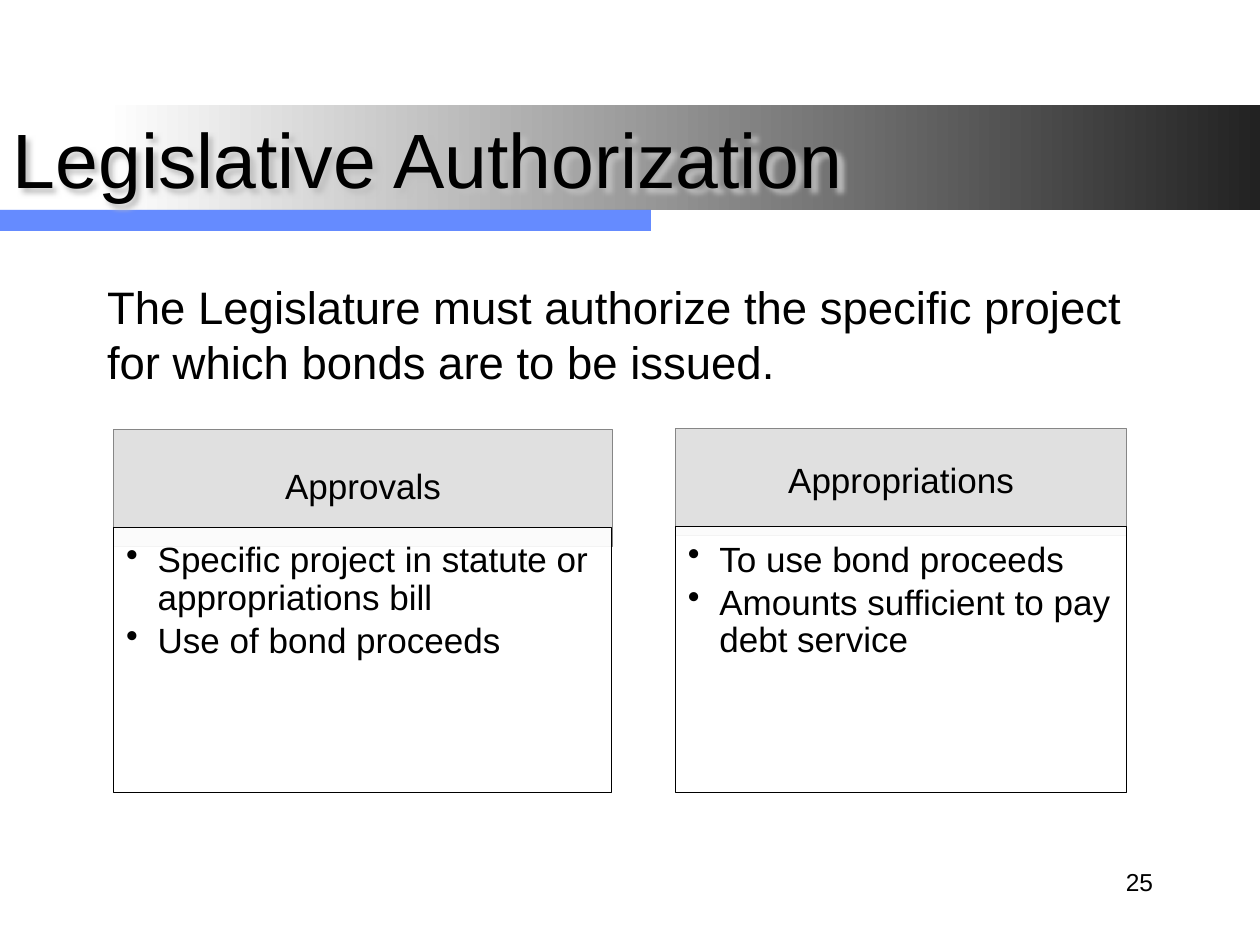
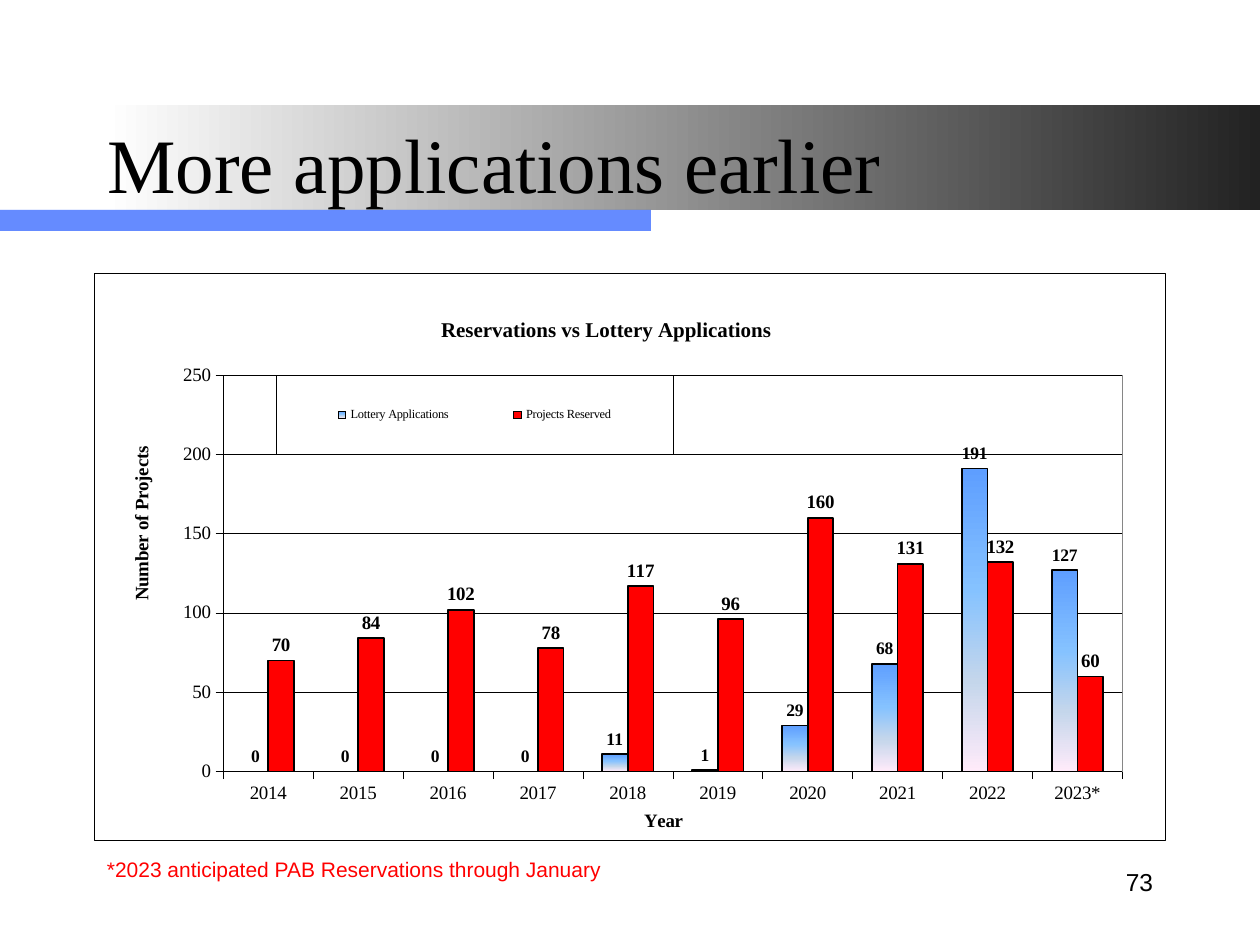
from lxml import etree
from pptx import Presentation
from pptx.chart.data import CategoryChartData
from pptx.dml.color import RGBColor
from pptx.enum.chart import XL_CHART_TYPE, XL_LABEL_POSITION, XL_LEGEND_POSITION, XL_TICK_MARK
from pptx.enum.shapes import MSO_SHAPE
from pptx.enum.text import MSO_ANCHOR, MSO_AUTO_SIZE, PP_ALIGN
from pptx.oxml import parse_xml
from pptx.oxml.ns import nsdecls, qn
from pptx.util import Pt

BLACK = RGBColor(0x00, 0x00, 0x00)
WHITE = RGBColor(0xFF, 0xFF, 0xFF)
RED = RGBColor(0xFF, 0x00, 0x00)
BLUE = RGBColor(0x33, 0x66, 0xFF)
GRAY = RGBColor(0x86, 0x86, 0x86)
CHARCOAL = RGBColor(0x22, 0x22, 0x22)
BAND_STOPS = [(0, WHITE), (100, CHARCOAL)]
LOTTERY_STOPS = [
    (0, RGBColor(0x5E, 0x9E, 0xFF)),
    (40, RGBColor(0x85, 0xC2, 0xFF)),
    (70, RGBColor(0xC4, 0xD6, 0xEB)),
    (100, RGBColor(0xFF, 0xEB, 0xFA)),
]

RECTANGLE = MSO_SHAPE.RECTANGLE
TOP, MIDDLE = MSO_ANCHOR.TOP, MSO_ANCHOR.MIDDLE
LEFT, CENTER, RIGHT = PP_ALIGN.LEFT, PP_ALIGN.CENTER, PP_ALIGN.RIGHT
NO_AUTOFIT = MSO_AUTO_SIZE.NONE
COLUMNS = XL_CHART_TYPE.COLUMN_CLUSTERED
OUTSIDE, NO_TICK = XL_TICK_MARK.OUTSIDE, XL_TICK_MARK.NONE
LABEL_ABOVE = XL_LABEL_POSITION.OUTSIDE_END
LEGEND_RIGHT = XL_LEGEND_POSITION.RIGHT

SANS, SERIF = "Arial", "Times New Roman"
CONTENT_BOX = (54, 156, 612, 324)

YEARS = ["2014", "2015", "2016", "2017", "2018", "2019", "2020", "2021", "2022", "2023*"]
LOTTERY_APPLICATIONS = [0, 0, 0, 0, 11, 1, 29, 68, 191, 127]
PROJECTS_RESERVED = [70, 84, 102, 78, 117, 96, 160, 131, 132, 60]


def apply_format(target, **values):
    for name, value in values.items():
        setattr(target, name, value)


def style_font(font, size, name=SANS, color=BLACK, bold=False):
    apply_format(font, size=Pt(size), name=name, bold=bold)
    font.color.rgb = color


def place(shape, box):
    left, top, width, height = map(Pt, box)
    apply_format(shape, left=left, top=top, width=width, height=height)


def set_gradient(fill, root, stops, angle):
    """Fill with any number of stops; root is the element that holds the fill."""
    fill.gradient()
    fill.gradient_angle = angle
    stop_list = next(root.iter(qn("a:gsLst")))
    for stop in list(stop_list):
        stop_list.remove(stop)
    for percent, color in stops:
        stop = etree.SubElement(stop_list, qn("a:gs"), pos=str(percent * 1000))
        etree.SubElement(stop, qn("a:srgbClr"), val=str(color))


def set_opacity(root, percent):
    for color in root.spPr.iter(qn("a:srgbClr")):
        etree.SubElement(color, qn("a:alpha"), val=str(percent * 1000))


def add_rectangle(shapes, box, fill, opacity=100, line=None):
    shape = shapes.add_shape(RECTANGLE, *map(Pt, box))
    shape.shadow.inherit = False
    shape.fill.solid()
    shape.fill.fore_color.rgb = fill
    set_opacity(shape.element, opacity)
    if line is None:
        shape.line.fill.background()
    else:
        shape.line.color.rgb = line
        shape.line.width = Pt(0.5)
    return shape


def add_master_bands(slide):
    """Draw the title bands and move them to the master, behind its placeholders."""
    gradient_band = add_rectangle(slide.shapes, (60, 60, 660, 60), WHITE)
    set_gradient(gradient_band.fill, gradient_band.element, BAND_STOPS, 0)
    bands = [gradient_band]
    for _ in range(2):
        bands.append(add_rectangle(slide.shapes, (0, 120, 372, 12), BLUE, 50))
    master_tree = slide.slide_layout.slide_master.element.cSld.spTree
    for index, band in enumerate(bands):
        band.element.nvSpPr.cNvPr.set("id", str(20 + index))
        master_tree.insert(2 + index, band.element)


def set_title(slide, text, box, font_name):
    title = slide.shapes.title
    place(title, box)
    title.text = text
    apply_format(title.text_frame, vertical_anchor=MIDDLE, auto_size=NO_AUTOFIT)
    paragraph = title.text_frame.paragraphs[0]
    paragraph.alignment = LEFT
    style_font(paragraph.runs[0].font, 44, font_name)
    return title


def add_text_shadow(shape):
    shape.element.spPr.append(parse_xml(
        f'<a:effectLst {nsdecls("a")}>'
        '<a:outerShdw blurRad="38100" dist="38100" dir="2700000">'
        '<a:srgbClr val="C0C0C0"/></a:outerShdw></a:effectLst>'))


def add_text(slide, text, box, size, color=BLACK, alignment=LEFT, anchor=TOP):
    text_box = slide.shapes.add_textbox(*map(Pt, box))
    apply_format(text_box.text_frame, word_wrap=True, vertical_anchor=anchor)
    paragraph = text_box.text_frame.paragraphs[0]
    paragraph.alignment = alignment
    run = paragraph.add_run()
    run.text = text
    style_font(run.font, size, color=color)


def add_page_number(slide, number):
    add_text(slide, str(number), (516, 486, 150, 36), 14, alignment=RIGHT, anchor=MIDDLE)


def set_bullet(paragraph, indent, character=None):
    properties = paragraph._p.get_or_add_pPr()
    properties.set("marL", str(Pt(indent)))
    properties.set("indent", str(-Pt(indent)))
    if character:
        etree.SubElement(properties, qn("a:buChar"), char=character)
    else:
        etree.SubElement(properties, qn("a:buNone"))


def set_statement(slide, text):
    body = slide.placeholders[1]
    place(body, CONTENT_BOX)
    body.text = text
    body.text_frame.auto_size = NO_AUTOFIT
    paragraph = body.text_frame.paragraphs[0]
    apply_format(paragraph, space_before=Pt(5.2), space_after=Pt(6))
    set_bullet(paragraph, 0)
    style_font(paragraph.runs[0].font, 26)


def fill_card_text(shape, lines, margins, space_after, **paragraph_format):
    frame = shape.text_frame
    sides = ("margin_left", "margin_top", "margin_right", "margin_bottom")
    apply_format(frame, word_wrap=True, **dict(zip(sides, map(Pt, margins))))
    frame.text = "\n".join(lines)
    for paragraph in frame.paragraphs:
        apply_format(paragraph, line_spacing=0.9, space_after=Pt(space_after), **paragraph_format)
        style_font(paragraph.runs[0].font, 20)


def add_card(slide, box, heading, header_height, bullets, body_width):
    """Header over a bulleted panel, which fills the box from 56 points down."""
    left, top, width, height = box
    panel_offset = 56
    shapes = slide.shapes.add_group_shape().shapes
    header = add_rectangle(shapes, (left, top, width, header_height), GRAY, 25, GRAY)
    fill_card_text(header, [heading], (11.5, 6.5, 11.5, 6.5), 7, alignment=CENTER)
    panel_box = (left, top + panel_offset, body_width, height - panel_offset)
    panel = add_rectangle(shapes, panel_box, WHITE, 90, BLACK)
    panel.text_frame.vertical_anchor = TOP
    fill_card_text(panel, bullets, (7.2, 8.6, 0, 12.2), 3, alignment=LEFT)
    for paragraph in panel.text_frame.paragraphs:
        set_bullet(paragraph, 18, "•")


def set_layout(element, left, top, width=None, height=None, inner=False):
    """Place a chart element at fractions of the chart area."""
    for old in element.findall(qn("c:layout")):
        element.remove(old)
    layout = etree.Element(qn("c:layout"))
    manual = etree.SubElement(layout, qn("c:manualLayout"))
    settings = {"layoutTarget": "inner" if inner else None, "xMode": "edge", "yMode": "edge",
                "x": left, "y": top, "w": width, "h": height}
    for name, value in settings.items():
        if value is not None:
            etree.SubElement(manual, qn(f"c:{name}"), val=str(value))
    overlay = element.find(qn("c:overlay"))
    element.insert(0 if overlay is None else element.index(overlay), layout)


def frame_properties(line_color):
    return parse_xml(
        f'<c:spPr {nsdecls("c", "a")}><a:solidFill><a:srgbClr val="{WHITE}"/></a:solidFill>'
        f'<a:ln w="{Pt(0.25)}"><a:solidFill><a:srgbClr val="{line_color}"/></a:solidFill></a:ln>'
        '</c:spPr>')


def set_chart_title(title, text, size):
    title.text_frame.text = text
    style_font(title.text_frame.paragraphs[0].runs[0].font, size, SERIF, bold=True)


def style_axis(axis, title):
    apply_format(axis, major_tick_mark=OUTSIDE, minor_tick_mark=NO_TICK)
    style_font(axis.tick_labels.font, 10.8, SERIF)
    axis.format.line.color.rgb = BLACK
    axis.format.line.width = Pt(0.25)
    set_chart_title(axis.axis_title, title, 10.8)


def style_series(series, label_size):
    series.invert_if_negative = False
    series.format.line.color.rgb = BLACK
    series.format.line.width = Pt(1)
    labels = series.data_labels
    apply_format(labels, show_value=True, position=LABEL_ABOVE)
    style_font(labels.font, label_size, SERIF, bold=True)


def add_reservations_chart(slide, box):
    data = CategoryChartData()
    data.categories = YEARS
    data.add_series("Lottery Applications", LOTTERY_APPLICATIONS)
    data.add_series("Projects Reserved", PROJECTS_RESERVED)
    chart = slide.shapes.add_chart(COLUMNS, *map(Pt, box), data).chart
    root = chart._chartSpace
    style_font(chart.font, 10)
    apply_format(chart, has_title=True, has_legend=True)
    set_chart_title(chart.chart_title, "Reservations vs Lottery Applications", 12)

    style_axis(chart.category_axis, "Year")
    value_axis = chart.value_axis
    style_axis(value_axis, "Number of Projects")
    apply_format(value_axis, minimum_scale=0, maximum_scale=250, major_unit=50)
    value_axis.major_gridlines.format.line.color.rgb = BLACK
    value_axis.major_gridlines.format.line.width = Pt(0.25)

    plot = chart.plots[0]
    apply_format(plot, gap_width=150, overlap=0, vary_by_categories=False)
    lottery, reserved = plot.series
    style_series(lottery, 10)
    style_series(reserved, 10.8)
    set_gradient(lottery.format.fill, root, LOTTERY_STOPS, 270)
    reserved.format.fill.solid()
    reserved.format.fill.fore_color.rgb = RED

    apply_format(chart.legend, position=LEGEND_RIGHT, include_in_layout=False)
    style_font(chart.legend.font, 7.1, SERIF)
    legend = next(root.iter(qn("c:legend")))
    legend.find(qn("c:txPr")).addprevious(frame_properties(BLACK))
    plot_area = next(root.iter(qn("c:plotArea")))
    plot_area.append(frame_properties(GRAY))
    root.find(qn("c:txPr")).addprevious(frame_properties(BLACK))

    set_layout(plot_area, 0.12, 0.18, 0.84, 0.7, inner=True)
    set_layout(legend, 0.17, 0.18, 0.37, 0.14)
    set_layout(root.find(f'{qn("c:chart")}/{qn("c:title")}'), 0.32, 0.07)
    set_layout(next(root.iter(qn("c:catAx"))).find(qn("c:title")), 0.51, 0.94)
    set_layout(next(root.iter(qn("c:valAx"))).find(qn("c:title")), 0.03, 0.3)


def build_authorization_slide(slide):
    title = set_title(slide, "Legislative Authorization", (0, 60, 720, 60), SANS)
    add_text_shadow(title)
    set_statement(slide, "The Legislature must authorize the specific project "
                         "for which bonds are to be issued.")
    add_card(slide, (65, 245.5, 285, 207.5), "Approvals", 67,
             ["Specific project in statute or appropriations bill", "Use of bond proceeds"], 284.5)
    add_card(slide, (386, 245, 258, 208), "Appropriations", 61,
             ["To use bond proceeds", "Amounts sufficient to pay debt service"], 258)
    add_page_number(slide, 25)


def build_applications_slide(slide):
    set_title(slide, "More applications earlier", (54, 48, 612, 90), SERIF)
    add_page_number(slide, 73)
    add_reservations_chart(slide, CONTENT_BOX)
    add_text(slide, "*2023 anticipated PAB Reservations through January",
             (54, 486, 320.4, 21.6), 12, RED)


def main():
    presentation = Presentation()
    apply_format(presentation, slide_width=Pt(720), slide_height=Pt(540))
    content_layout, title_layout = presentation.slide_layouts[1], presentation.slide_layouts[5]
    authorization_slide = presentation.slides.add_slide(content_layout)
    add_master_bands(authorization_slide)
    build_authorization_slide(authorization_slide)
    build_applications_slide(presentation.slides.add_slide(title_layout))
    presentation.save("out.pptx")


if __name__ == "__main__":
    main()
